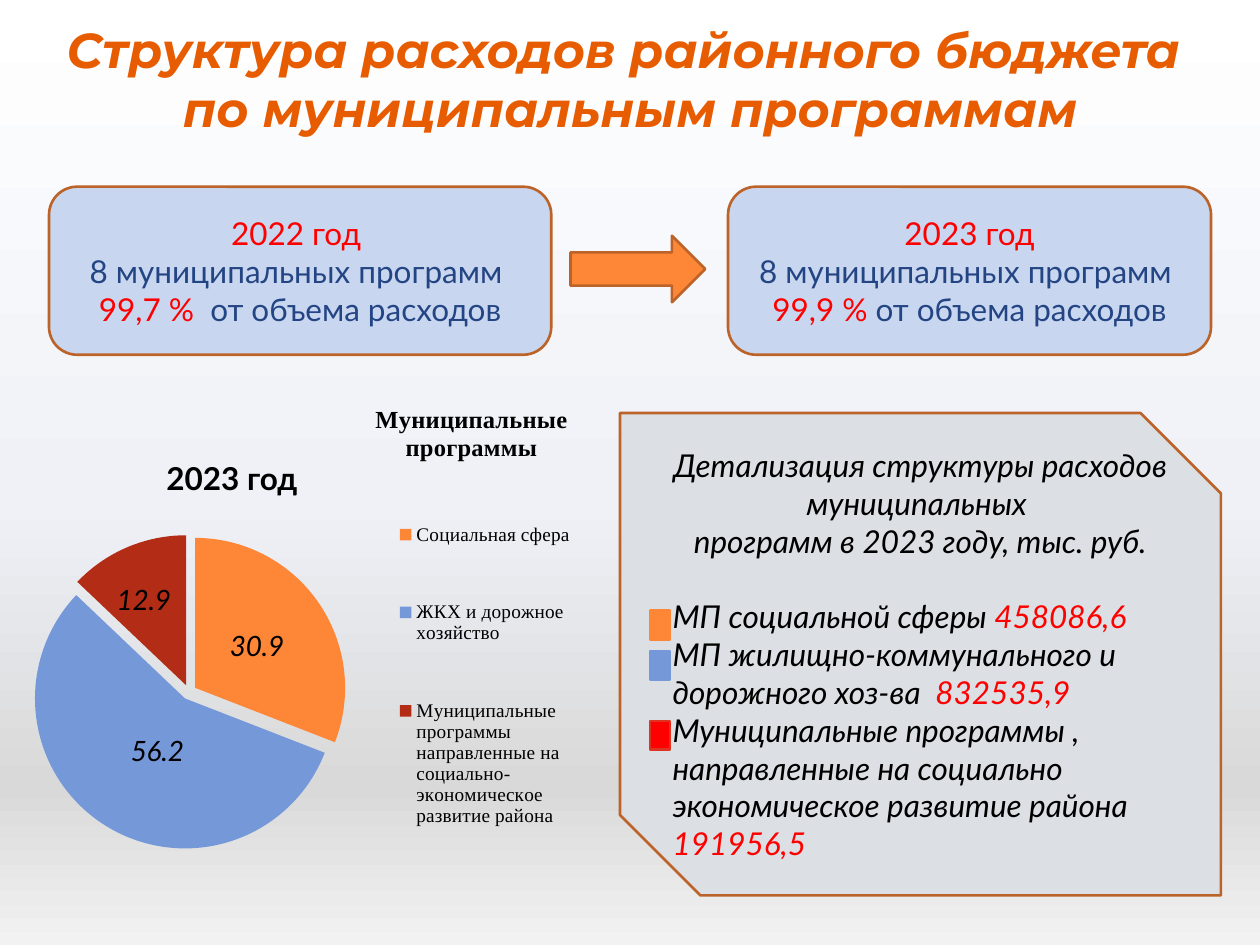
from copy import deepcopy

from lxml.etree import fromstring
from pptx import Presentation
from pptx.chart.data import CategoryChartData
from pptx.dml.color import RGBColor
from pptx.enum.chart import XL_CHART_TYPE, XL_LABEL_POSITION, XL_LEGEND_POSITION
from pptx.enum.shapes import MSO_SHAPE
from pptx.enum.text import MSO_ANCHOR, MSO_AUTO_SIZE, PP_ALIGN
from pptx.util import Pt

COLORS = {
    "title": "E75C01", "outline": "BC6329", "box": "C8D6F0", "panel": "DCDFE3",
    "blue text": "244583", "black": "000000", "red": "FF0000", "red edge": "DF3321",
    "orange": "FE8637", "blue": "7598D9", "brick": "B32C16",
}
CHART_NAMESPACE = "http://schemas.openxmlformats.org/drawingml/2006/chart"


def add_box(kind, left, top, width, height, fill, line):
    shape = slide.shapes.add_shape(kind, Pt(left), Pt(top), Pt(width), Pt(height))
    shape.shadow.inherit = False
    shape.fill.solid()
    shape.fill.fore_color.rgb = RGBColor.from_string(COLORS[fill])
    shape.line.color.rgb = RGBColor.from_string(COLORS[line])
    shape.line.width = Pt(1.5)
    return shape


def write_lines(text_frame, lines, alignment, **font_format):
    """Write one paragraph per line; a line is a list of (text, color) runs."""
    for number, line in enumerate(lines):
        paragraph = text_frame.paragraphs[0] if number == 0 else text_frame.add_paragraph()
        paragraph.alignment = alignment
        paragraph.space_before = Pt(0)
        for text, color in line:
            run = paragraph.add_run()
            run.text = text
            run.font.color.rgb = RGBColor.from_string(COLORS[color])
            for name, value in ({"name": "Lato", "size": Pt(18)} | font_format).items():
                setattr(run.font, name, value)


presentation = Presentation()
presentation.slide_width, presentation.slide_height = Pt(720), Pt(540)
slide = presentation.slides.add_slide(presentation.slide_layouts[5])

# Background gradient, top to bottom
fill = slide.background.fill
fill.gradient()
fill.gradient_angle = 270
first_stop, last_stop = slide.background._cSld.xpath(".//a:gs")
for _ in range(2):
    first_stop.addnext(deepcopy(first_stop))
background_stops = [(0, "FFFFFF"), (0.53, "EFF1F7"), (0.83, "D9D9D9"), (1, "F2F2F2")]
for stop, (position, color) in zip(fill.gradient_stops, background_stops):
    stop.position = position
    stop.color.rgb = RGBColor.from_string(color)

# Pie chart
chart_data = CategoryChartData(number_format="0.0")
chart_data.categories = [
    "Социальная сфера",
    "ЖКХ и дорожное хозяйство",
    "Муниципальные программы направленные на социально- экономическое развитие района",
]
chart_data.add_series("2023 год", [30.9, 56.2, 12.9])
chart = slide.shapes.add_chart(
    XL_CHART_TYPE.PIE, Pt(0), Pt(219), Pt(360), Pt(321), chart_data).chart
chart.has_title = chart.has_legend = True
write_lines(chart.chart_title.text_frame,
            [[("Муниципальные", "black")], [("программы", "black")]],
            PP_ALIGN.CENTER, name="Times New Roman", size=Pt(14), bold=True)
chart.legend.position = XL_LEGEND_POSITION.RIGHT
chart.legend.include_in_layout = False

plot = chart.plots[0]
plot.vary_by_categories = True
plot.has_data_labels = True
series = plot.series[0]
labels = series.data_labels
labels.show_value = True
moved_labels = [series.points[number].data_label for number in (1, 2)]
label_format = {"name": "Lato", "size": Pt(16), "italic": True}
chart_fonts = [
    (chart.font, {"name": "Lato", "size": Pt(18)}),
    (chart.legend.font, {"name": "Times New Roman", "size": Pt(11)}),
]
for label in [labels, *moved_labels]:
    label.position = XL_LABEL_POSITION.CENTER
    chart_fonts.append((label.font, label_format))
for font, font_format in chart_fonts:
    font.color.rgb = RGBColor.from_string(COLORS["black"])
    for name, value in font_format.items():
        setattr(font, name, value)

# Slices pulled apart
series._element.find(f"{{{CHART_NAMESPACE}}}tx").addnext(
    fromstring(f'<c:explosion xmlns:c="{CHART_NAMESPACE}" val="5"/>'))
for number, color in enumerate(["orange", "blue", "brick"]):
    slice_fill = series.points[number].format.fill
    slice_fill.solid()
    slice_fill.fore_color.rgb = RGBColor.from_string(COLORS[color])

# Chart part positions, as fractions of the chart; labels move from their centre
blue_label, brick_label = series._element.xpath("./c:dLbls/c:dLbl")
edge = '<c:xMode val="edge"/><c:yMode val="edge"/>'
chart_layouts = [
    (chart.chart_title._element, 1, edge, {"x": 0.59, "y": 0.03}),
    (chart.legend._element, 1, edge, {"x": 0.61, "y": 0.15, "w": 0.32, "h": 0.74}),
    (chart._chartSpace.chart.plotArea, 0, '<c:layoutTarget val="inner"/>' + edge,
     {"x": 0.05, "y": 0.16, "w": 0.5, "h": 0.78}),
    (blue_label, 1, "", {"x": 0.02, "y": -0.02}),
    (brick_label, 1, "", {"x": -0.02, "y": -0.03}),
]
for parent, index, modes, place in chart_layouts:
    for old_layout in parent.findall(f"{{{CHART_NAMESPACE}}}layout"):
        parent.remove(old_layout)
    values = "".join(f'<c:{name} val="{value}"/>' for name, value in place.items())
    parent.insert(index, fromstring(
        f'<c:layout xmlns:c="{CHART_NAMESPACE}"><c:manualLayout>'
        f"{modes}{values}</c:manualLayout></c:layout>"))

# Title
title = slide.shapes.title
title.left, title.top, title.width, title.height = Pt(0), Pt(0), Pt(720), Pt(90)
title.text_frame.vertical_anchor = MSO_ANCHOR.MIDDLE
write_lines(title.text_frame, [
    [("Структура расходов районного бюджета ", "title")],
    [("по муниципальным программам", "title")],
], PP_ALIGN.CENTER, name="Montserrat", size=Pt(28), bold=True, italic=True)

# Year boxes and the arrow between them
year_boxes = [(28, 287, "2022 год ", "99,7 %  "), (416, 276, "2023 год", "99,9 % ")]
for left, width, year, share in year_boxes:
    box = add_box(MSO_SHAPE.ROUNDED_RECTANGLE, left, 106.7, width, 96, "box", "outline")
    box.text_frame.vertical_anchor = MSO_ANCHOR.MIDDLE
    write_lines(box.text_frame, [
        [(year, "red")],
        [("8 муниципальных программ ", "blue text")],
        [(share, "red"), ("от объема расходов", "blue text")],
    ], PP_ALIGN.CENTER)
add_box(MSO_SHAPE.RIGHT_ARROW, 326, 134.7, 77, 38, "orange", "outline")

# Chart caption
caption = slide.shapes.add_textbox(Pt(88), Pt(258.5), Pt(93), Pt(29)).text_frame
caption.word_wrap = False
caption.auto_size = MSO_AUTO_SIZE.SHAPE_TO_FIT_TEXT
write_lines(caption, [[("2023 год", "black")]], PP_ALIGN.LEFT, bold=True)

# Details panel
panel = add_box(MSO_SHAPE.SNIP_2_DIAG_RECTANGLE, 354.3, 236, 343.4, 275.6, "panel", "outline")
panel.text_frame.vertical_anchor = MSO_ANCHOR.MIDDLE
write_lines(panel.text_frame, [
    [("Детализация структуры расходов муниципальных ", "black")],
    [("программ в 2023 году, тыс. руб.", "black")],
    [("МП социальной сферы ", "black"), ("458086,6", "red")],
    [("МП жилищно-коммунального и дорожного хоз-ва  ", "black"), ("832535,9", "red")],
    [("Муниципальные программы , направленные на социально экономическое развитие района ",
      "black"), ("191956,5", "red")],
], PP_ALIGN.LEFT, italic=True)
paragraphs = panel.text_frame.paragraphs
for paragraph in paragraphs[:2]:
    paragraph.alignment = PP_ALIGN.CENTER
paragraphs[2].space_before = Pt(21.6)

# Color keys beside the panel items
for top, color, edge_color in [
        (349, "orange", "orange"), (372, "blue", "blue"), (412, "red", "red edge")]:
    add_box(MSO_SHAPE.RECTANGLE, 371.5, top, 11.5, 16.5, color, edge_color)

presentation.save("out.pptx")
